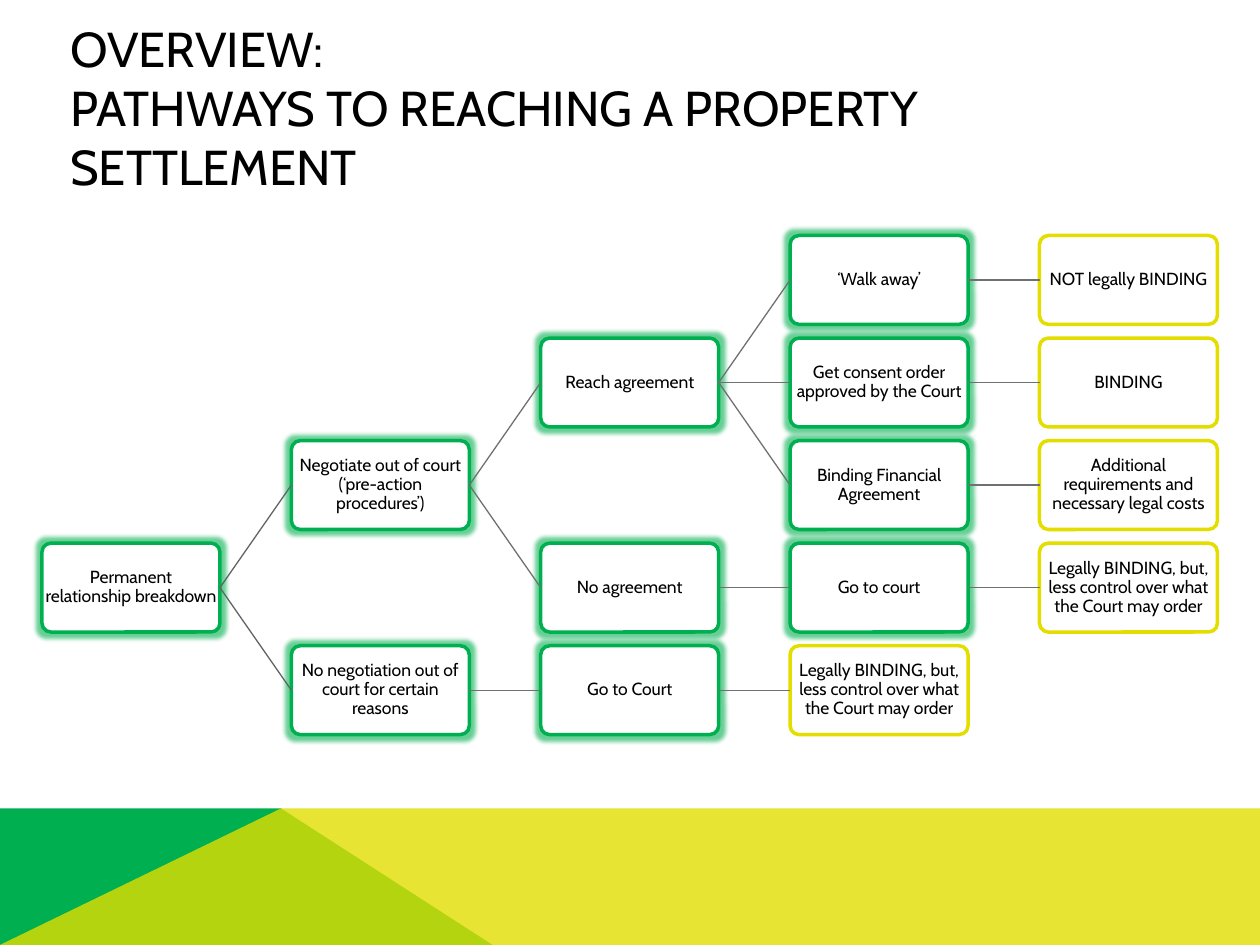
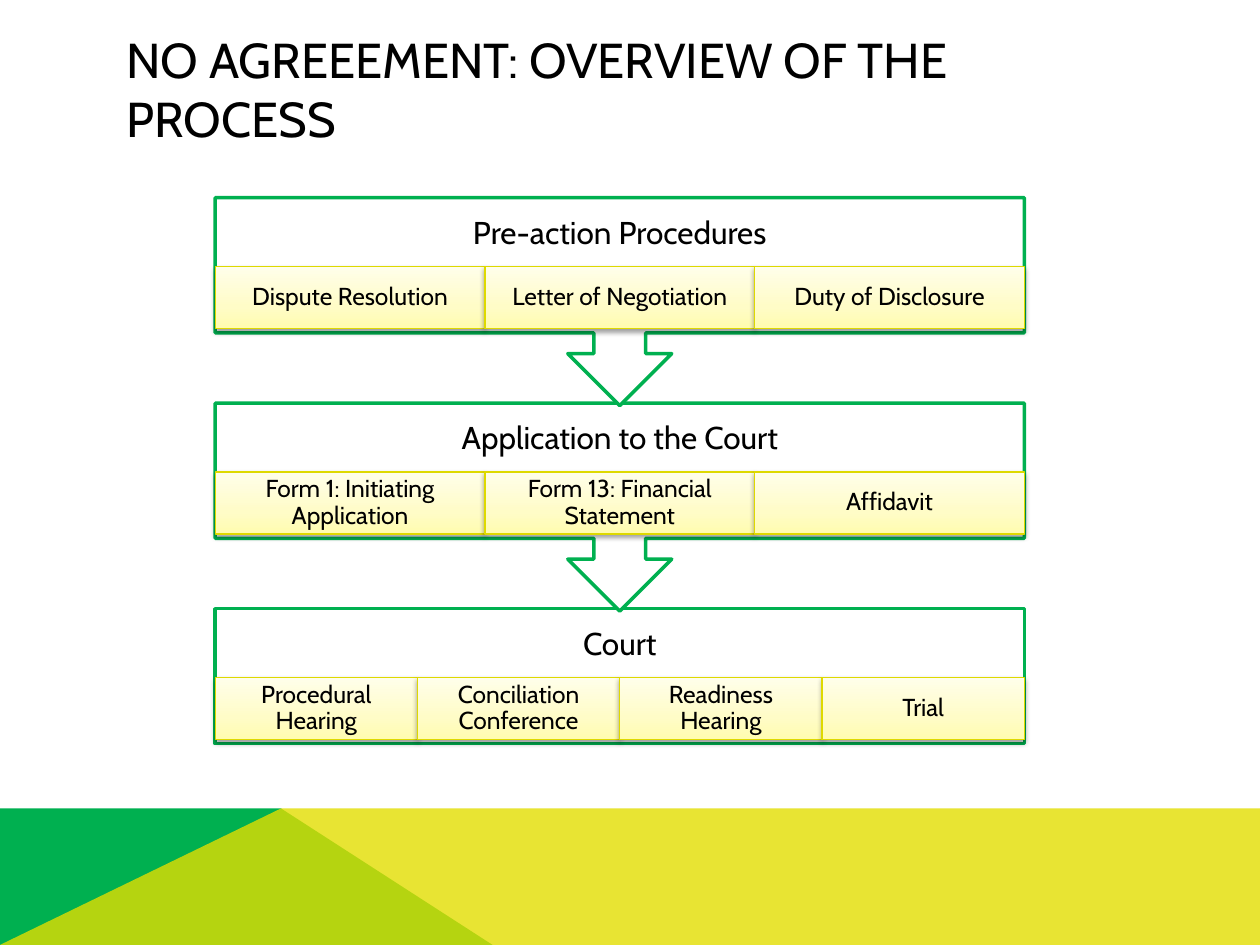
"""Build two slides on the routes to a property settlement."""
from copy import deepcopy
from itertools import count

from lxml.etree import SubElement
from pptx import Presentation
from pptx.dml.color import RGBColor
from pptx.enum.shapes import MSO_CONNECTOR, MSO_SHAPE
from pptx.enum.text import MSO_ANCHOR, MSO_AUTO_SIZE, PP_ALIGN
from pptx.oxml.ns import qn
from pptx.util import Pt

COLOURS = {
    "text": "000000",
    "panel": "FFFFFF",
    "green": "00B050",
    "yellow": "E3DE00",
    "step_edge": "DED900",
    "first_link": "616365",
    "link": "6E7072",
}
STEP_GRADIENT = [(0, "FFFCAF"), (0.35, "FFFCC7"), (1, "FFFEEA")]
FONT = "Cabin"

LESS_CONTROL = ("Legally BINDING, but, less control over what the Court may order", [])
PATHWAYS = ("Permanent relationship breakdown", [
    ("Negotiate out of court (‘pre-action procedures’)", [
        ("Reach agreement", [
            ("‘Walk away’", [("NOT legally BINDING", [])]),
            ("Get consent order approved by the Court", [("BINDING", [])]),
            ("Binding Financial Agreement", [
                ("Additional requirements and necessary legal costs", []),
            ]),
        ]),
        ("No agreement", [("Go to court", [LESS_CONTROL])]),
    ]),
    ("No negotiation out of court for certain reasons", [
        ("Go to Court", [LESS_CONTROL]),
    ]),
])

STAGES = [
    ("Pre-action Procedures",
     ["Dispute Resolution", "Letter of Negotiation", "Duty of Disclosure"]),
    ("Application to the Court",
     ["Form 1: Initiating Application", "Form 13: Financial Statement", "Affidavit"]),
    ("Court",
     ["Procedural Hearing", "Conciliation Conference", "Readiness Hearing", "Trial"]),
]


def colour(name):
    """Return the named palette colour."""
    return RGBColor.from_string(COLOURS[name])


class SlideBuilder:
    """Hold the shared style and draw on the current slide."""

    def __init__(self):
        """Start a deck with a title-only layout."""
        self.deck = Presentation()
        self.deck.slide_width, self.deck.slide_height = Pt(720), Pt(540)
        self.layout = self.deck.slide_layouts[5]
        self.page = None

    def new_page(self, title, left, top, width, height):
        """Add a slide, format its title and give the layout its bands once."""
        self.page = self.deck.slides.add_slide(self.layout)
        if len(self.deck.slides) == 1:
            self.band([(0, 540), (0, 462), (160.6, 462), (281.5, 540)], "green")
            self.band([(0, 540), (160.6, 462), (720, 462), (720, 540)], "yellow", 80)
        box = self.page.shapes.title
        box.left, box.top, box.width, box.height = map(Pt, (left, top, width, height))
        self.set_text(box, title, 28, PP_ALIGN.LEFT)

    def band(self, points, fill, opacity=100):
        """Draw a band polygon and move it to the layout."""
        builder = self.page.shapes.build_freeform(Pt(points[0][0]), Pt(points[0][1]))
        builder.add_line_segments([(Pt(x), Pt(y)) for x, y in points[1:]])
        shape = builder.convert_to_shape()
        shape.shadow.inherit = False
        shape.fill.solid()
        shape.fill.fore_color.rgb = colour(fill)
        shape.line.fill.background()
        if opacity < 100:
            self.set_opacity(shape.element.spPr.find(".//" + qn("a:srgbClr")), opacity)
        self.layout.shapes.element.append(shape.element)

    def set_opacity(self, colour_element, percent):
        """Make a colour element partly transparent."""
        SubElement(colour_element, qn("a:alpha"), val=str(percent * 1000))

    def set_text(self, box, text, size, align=PP_ALIGN.CENTER, spacing=None):
        """Put one formatted paragraph into a shape."""
        frame = box.text_frame
        frame.text = text
        frame.word_wrap = True
        frame.auto_size = MSO_AUTO_SIZE.NONE
        frame.vertical_anchor = MSO_ANCHOR.MIDDLE
        para = frame.paragraphs[0]
        para.alignment = align
        para.line_spacing = spacing
        for span in para.runs:
            span.font.name = FONT
            span.font.size = Pt(size)
            span.font.color.rgb = colour("text")

    def box(self, kind, place, text, size, edge, weight, insets):
        """Draw a white outlined shape with centred text."""
        shape = self.page.shapes.add_shape(kind, *map(Pt, place))
        shape.shadow.inherit = False
        shape.fill.solid()
        shape.fill.fore_color.rgb = colour("panel")
        shape.line.color.rgb = colour(edge)
        shape.line.width = Pt(weight)
        self.set_text(shape, text, size, spacing=0.9)
        frame = shape.text_frame
        (frame.margin_left, frame.margin_top,
         frame.margin_right, frame.margin_bottom) = map(Pt, insets)
        return shape

    def effect(self, shape, tag, value, opacity, **settings):
        """Add a glow or shadow to a shape."""
        effects = shape.element.spPr.find(qn("a:effectLst"))
        effect = SubElement(effects, qn(tag), **settings)
        self.set_opacity(SubElement(effect, qn("a:srgbClr"), val=value), opacity)

    def link(self, parent, child, line):
        """Join the right side of one box to the left side of another."""
        connector = self.page.shapes.add_connector(MSO_CONNECTOR.STRAIGHT, 0, 0, 0, 0)
        connector.begin_connect(parent, 3)
        connector.end_connect(child, 1)
        connector.line.color.rgb = colour(line)
        connector.line.width = Pt(0.75)
        SubElement(connector.element.spPr, qn("a:effectLst"))

    def tree(self, node, leaf_rows, depth=0):
        """Draw a node midway between its children and return its box and row."""
        label, children = node
        branches = [self.tree(child, leaf_rows, depth + 1) for child in children]
        row = (branches[0][1] + branches[-1][1]) / 2 if branches else next(leaf_rows)
        place = (24 + 142.5 * depth, 134.6 + 58.6 * row, 101.7, 50.8)
        edge = "green" if branches else "yellow"
        shape = self.box(MSO_SHAPE.ROUNDED_RECTANGLE, place, label, 10, edge, 2, [0.4] * 4)
        shape.adjustments[0] = 0.1
        if branches:
            self.effect(shape, "a:glow", COLOURS["green"], 60, rad=str(Pt(5)))
        for child, _ in branches:
            self.link(shape, child, "link" if depth else "first_link")
        return shape, row

    def step(self, place, text):
        """Draw a pale yellow step with a soft shadow."""
        shape = self.box(MSO_SHAPE.RECTANGLE, place, text, 14, "step_edge", 0.75,
                         (8, 1.5, 8, 1.5))
        shape.fill.gradient()
        shape.fill.gradient_angle = 90
        stops = shape.element.spPr.find(".//" + qn("a:gsLst"))
        stops.append(deepcopy(stops[0]))
        for stop, (position, value) in zip(shape.fill.gradient_stops, STEP_GRADIENT):
            stop.position = position
            stop.color.rgb = RGBColor.from_string(value)
        self.effect(shape, "a:outerShdw", COLOURS["text"], 38, blurRad=str(Pt(3.1)),
                    dist=str(Pt(1.6)), dir="5400000", rotWithShape="0")

    def stage(self, number, heading, steps, is_last):
        """Draw a stage panel with its row of steps."""
        left, top, width = 123, 113 + 117.4 * number, 462.4
        kind = MSO_SHAPE.RECTANGLE if is_last else MSO_SHAPE.DOWN_ARROW_CALLOUT
        height = 77.2 if is_last else 118.8
        self.box(kind, (left, top, width, height), heading, 18, "green", 2,
                 (10, 0, 10, 35.4))
        step_width = width / len(steps)
        for index, text in enumerate(steps):
            self.step((left + index * step_width, top + 39.3, step_width, 35.4), text)


def main():
    """Build and save the deck."""
    builder = SlideBuilder()
    builder.new_page("OVERVIEW:\vPATHWAYS TO REACHING A PROPERTY SETTLEMENT",
                     33, 39.6, 646, 43.2)
    builder.tree(PATHWAYS, count())

    builder.new_page("NO AGREEEMENT: OVERVIEW OF THE PROCESS", 65, 28.8, 592, 43.2)
    last = len(STAGES) - 1
    for number in range(last, -1, -1):
        heading, steps = STAGES[number]
        builder.stage(number, heading, steps, number == last)

    builder.deck.save("out.pptx")


if __name__ == "__main__":
    main()
